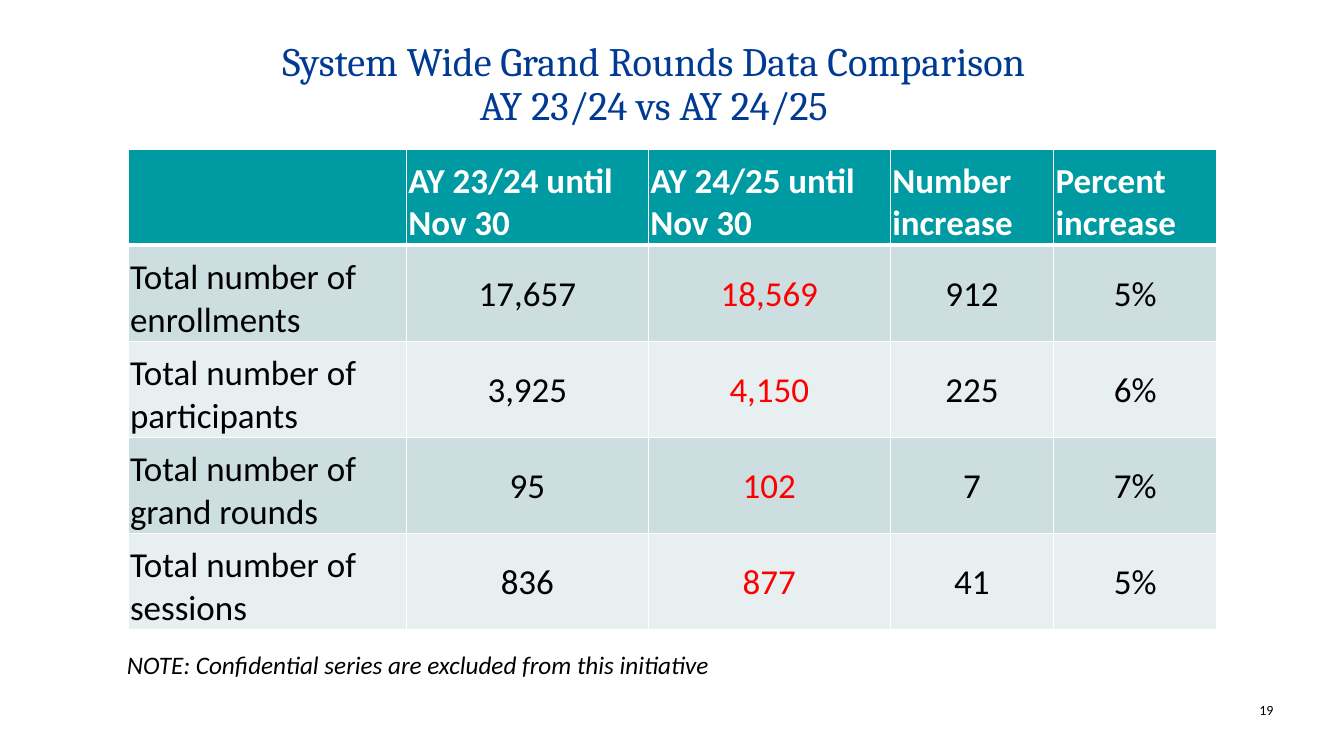
from lxml import etree
from pptx import Presentation
from pptx.dml.color import RGBColor
from pptx.enum.text import MSO_ANCHOR as Anchor, PP_ALIGN as Align
from pptx.oxml.ns import qn
from pptx.util import Inches, Pt

COLORS = {
    "title": "003A93", "header": "009AA3", "dark_band": "CCDEE0",
    "light_band": "E7EFF0", "text": "000000", "current": "FF0000",
    "white": "FFFFFF",
}
COLUMN_WIDTHS = [2.76, 2.4, 2.4, 1.62, 1.62]
COMPARISON = [
    ["", "AY 23/24 until Nov 30", "AY 24/25 until Nov 30",
     "Number increase", "Percent increase"],
    ["Total number of enrollments", "17,657", "18,569", "912", "5%"],
    ["Total number of participants", "3,925", "4,150", "225", "6%"],
    ["Total number of grand rounds", "95", "102", "7", "7%"],
    ["Total number of sessions", "836", "877", "41", "5%"],
]
CURRENT_YEAR_COLUMN = 2


def rgb(name):
    return RGBColor.from_string(COLORS[name])


def set_font(paragraph, size, color, name="Calibri", bold=False, italic=False):
    font = paragraph.font
    font.size, font.name = Pt(size), name
    font.bold, font.italic = bold, italic
    font.color.rgb = rgb(color)


def set_margins(holder, left, top, right, bottom):
    holder.margin_left, holder.margin_top = Inches(left), Inches(top)
    holder.margin_right, holder.margin_bottom = Inches(right), Inches(bottom)


def add_borders(cell, widths):
    """Draw white borders; widths maps the sides L, R, T, B to points."""
    properties = cell._tc.get_or_add_tcPr()
    for side in "LRTB":
        line = etree.SubElement(properties, qn(f"a:ln{side}"), w=str(Pt(widths[side])))
        fill = etree.SubElement(line, qn("a:solidFill"))
        etree.SubElement(fill, qn("a:srgbClr"), val=COLORS["white"])


def add_title(slide, left, top, width, height):
    title = slide.shapes.title
    title.left, title.top = Inches(left), Inches(top)
    title.width, title.height = Inches(width), Inches(height)
    frame = title.text_frame
    set_margins(frame, 0, 0, 0, 0)
    frame.vertical_anchor = Anchor.MIDDLE
    heading = frame.paragraphs[0]
    heading.add_run().text = "System Wide Grand Rounds Data Comparison"
    heading.add_line_break()
    heading.add_run().text = "AY 23/24 vs AY 24/25"
    heading.alignment, heading.line_spacing = Align.CENTER, 0.9
    set_font(heading, 28.8, "title", name="Cambria")


def format_cell(cell, row, column):
    is_header, is_label = row == 0, column == 0
    set_margins(cell, 0.02, 0.02, 0.02, 0)
    cell.vertical_anchor = Anchor.BOTTOM if is_header or is_label else Anchor.MIDDLE
    add_borders(cell, {"L": 1, "R": 1, "T": 3 if row == 1 else 1,
                       "B": 3 if is_header else 1})
    cell.fill.solid()
    band = "dark_band" if row % 2 else "light_band"
    cell.fill.fore_color.rgb = rgb("header" if is_header else band)

    paragraph = cell.text_frame.paragraphs[0]
    paragraph.alignment = Align.LEFT if is_header or is_label else Align.CENTER
    if is_header:
        color = "white"
    else:
        color = "current" if column == CURRENT_YEAR_COLUMN else "text"
    set_font(paragraph, 25, color, bold=is_header)


def add_comparison_table(slide, left, top, width, height):
    table = slide.shapes.add_table(
        len(COMPARISON), len(COLUMN_WIDTHS),
        Inches(left), Inches(top), Inches(width), Inches(height)).table
    table.horz_banding = False
    for column, column_width in zip(table.columns, COLUMN_WIDTHS):
        column.width = Inches(column_width)
    for row, values in enumerate(COMPARISON):
        for column, value in enumerate(values):
            cell = table.cell(row, column)
            cell.text = value
            format_cell(cell, row, column)


def add_note(slide, left, top, width, height):
    box = slide.shapes.add_textbox(Inches(left), Inches(top), Inches(width), Inches(height))
    box.text_frame.word_wrap = False
    note = box.text_frame.paragraphs[0]
    note.text = "NOTE: Confidential series are excluded from this initiative"
    set_font(note, 18, "text", italic=True)


def add_page_number(slide, left, top, width, height):
    box = slide.shapes.add_textbox(Inches(left), Inches(top), Inches(width), Inches(height))
    box.text_frame.word_wrap = True
    set_margins(box.text_frame, 0, 0, 0, 0)
    number = box.text_frame.paragraphs[0]
    number.text = "19"
    number.alignment = Align.RIGHT
    set_font(number, 10, "text")


def main():
    deck = Presentation()
    deck.slide_width, deck.slide_height = Inches(13.33), Inches(7.5)
    slide = deck.slides.add_slide(deck.slide_layouts[5])
    add_title(slide, 0.74, 0.44, 11.49, 0.82)
    add_comparison_table(slide, 1.27, 1.48, sum(COLUMN_WIDTHS), 4.77)
    add_note(slide, 1.16, 6.39, 6.09, 0.4)
    add_page_number(slide, 12.25, 6.96, 0.38, 0.17)
    deck.save("out.pptx")


if __name__ == "__main__":
    main()
